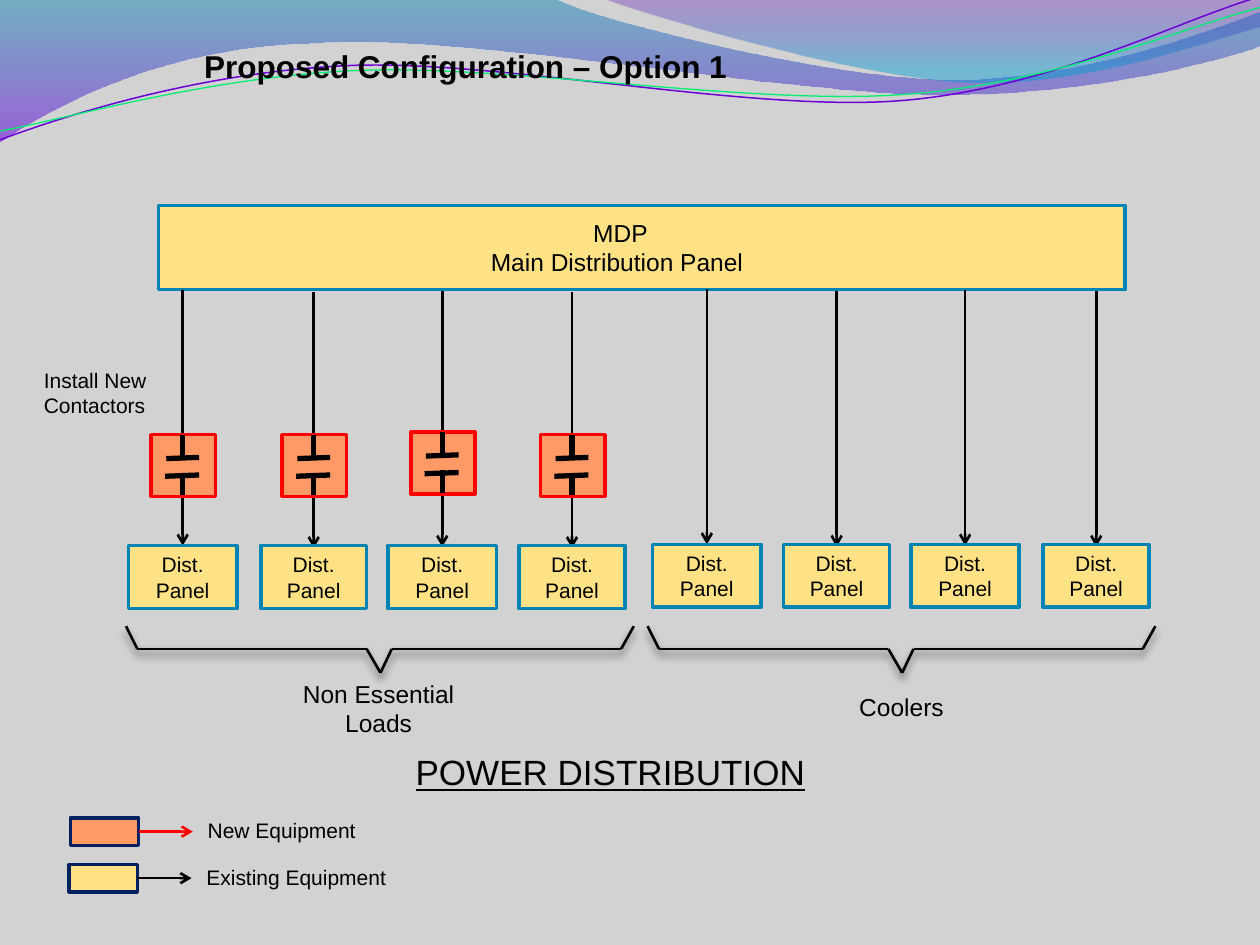
from dataclasses import dataclass
from math import cos, radians, sin

from lxml import etree
from pptx import Presentation
from pptx import util as u
from pptx.dml.color import RGBColor
from pptx.enum import shapes as kinds, text as txt
from pptx.oxml.ns import qn


@dataclass(frozen=True)
class Theme:
    font: str = "Arial"
    back: str = "D2D2D2"
    ink: str = "000000"
    old: str = "FFE285"
    new: str = "FF9966"
    teal: str = "0084B4"
    navy: str = "002060"
    red: str = "FF0000"
    small: int = 12
    label: int = 14
    title: int = 18
    head: int = 20


@dataclass(frozen=True)
class Box:
    left: float
    top: float
    width: float
    height: float


@dataclass(frozen=True)
class Wave:
    """Outline as a start point, then lines (2 numbers) and Bezier curves (6)."""
    start: tuple
    steps: tuple
    stops: tuple = ()
    color: str = ""
    width: float = 0
    mid: tuple = (0, 0)
    turn: float = 0


@dataclass(frozen=True)
class Key:
    text: str
    left: float
    top: float
    fill: str
    arrow: str


T = Theme()
LEFT, MID = txt.PP_ALIGN.LEFT, txt.PP_ALIGN.CENTER
GROW = txt.MSO_AUTO_SIZE.SHAPE_TO_FIT_TEXT

WAVES = (
    Wave((0, 0), ((4.4, -0.01), (4.76, 0.17, 6.64, 0.63, 7.58, 0.63),
                  (8.53, 0.63, 9.58, 0.26, 10, 0.09), (10.01, 0.36),
                  (9.83, 0.44, 8.7, 0.76, 7.46, 0.75),
                  (6.22, 0.75, 3.82, 0.28, 2.57, 0.34),
                  (1.29, 0.36, 0.46, 0.83, -0.01, 1.13)),
         stops=((0, "0082B2", 45), (1, "6E00DC", 55))),
    Wave((4.79, -0.01), ((5.09, 0.11, 6.82, 0.62, 7.69, 0.65),
                         (8.56, 0.69, 9.61, 0.32, 10, 0.21), (10, 0)),
         stops=((0, "5A00B3", 30), (0.8, "009BD4", 45))),
    Wave((0, 1.11), ((0.48, 0.93, 1.58, 0.57, 2.77, 0.52),
                     (3.95, 0.47, 5.93, 0.89, 7.13, 0.8),
                     (8.33, 0.71, 9.38, 0.15, 9.98, -0.02)),
         color="6B00D6", width=0.85, mid=(4.99, 0.57), turn=-2.7),
    Wave((0, 1.04), ((0.47, 0.96, 1.64, 0.61, 2.83, 0.56),
                     (4.03, 0.51, 5.97, 0.84, 7.17, 0.75),
                     (8.36, 0.67, 9.41, 0.21, 10, 0.06)),
         color="01EF72", width=0.75, mid=(5, 0.59), turn=-2.7),
)
KEYS = (Key("Existing Equipment", 0.55, 6.86, T.old, T.ink),
        Key("New Equipment", 0.56, 6.49, T.new, T.red))
LOADS = ((1.45, 2.3), (2.49, 2.32), (3.51, 2.31), (4.54, 2.32))  # centre, top
COOLERS = ((5.61, 2.29), (6.64, 2.31), (7.66, 2.3), (8.7, 2.31))
BRACE = ((0, 4.97), (0.09, 5.15), (1.91, 5.15), (2.02, 5.34),
         (2.11, 5.15), (3.93, 5.15), (4.03, 4.97))


def cm(inch: float) -> u.Length:
    """Convert the inch grid of the slide to centimetres."""
    return u.Cm(inch * 2.54)


def rgb(code: str) -> RGBColor:
    return RGBColor.from_string(code)


def write(shape, words: str, size: int, align=LEFT, bold=False, under=False) -> None:
    frame = shape.text_frame
    frame.word_wrap = True
    frame.text = words
    for para in frame.paragraphs:
        para.alignment = align
        for run in para.runs:
            font = run.font
            font.name, font.size = T.font, u.Pt(size)
            font.bold, font.underline = bold, under
            font.color.rgb = rgb(T.ink)


def label(slide, box: Box, words: str, size: int, align=LEFT, under=False) -> None:
    shape = slide.shapes.add_textbox(cm(box.left), cm(box.top), cm(box.width), cm(box.height))
    write(shape, words, size, align, under=under)
    shape.text_frame.auto_size = GROW


def block(slide, box: Box, fill: str, edge: str = ""):
    shape = slide.shapes.add_shape(kinds.MSO_SHAPE.RECTANGLE, cm(box.left), cm(box.top),
                                   cm(box.width), cm(box.height))
    shape.shadow.inherit = False
    shape.fill.solid()
    shape.fill.fore_color.rgb = rgb(fill)
    if edge:
        shape.line.color.rgb = rgb(edge)
        shape.line.width = u.Pt(2)
    else:
        shape.line.fill.background()
    return shape


def link(slide, start: tuple, end: tuple, color=T.ink, width=1.5, arrow=False, shade=False) -> None:
    line = slide.shapes.add_connector(kinds.MSO_CONNECTOR.STRAIGHT, cm(start[0]), cm(start[1]),
                                      cm(end[0]), cm(end[1]))
    line.line.color.rgb = rgb(color)
    line.line.width = u.Pt(width)
    props = line.element.spPr
    if arrow:
        etree.SubElement(props.find(qn("a:ln")), qn("a:tailEnd"), type="arrow")
    effects = etree.SubElement(props, qn("a:effectLst"))
    if shade:
        drop = etree.SubElement(effects, qn("a:outerShdw"), blurRad=str(u.Pt(4.5)),
                                dist=str(u.Pt(3)), dir="5400000", rotWithShape="0")
        tone = etree.SubElement(drop, qn("a:srgbClr"), val=T.ink)
        etree.SubElement(tone, qn("a:alpha"), val="48000")


def level(wave: Wave, x: float, y: float) -> tuple:
    """Point of the wave before its turn about mid."""
    a, dx, dy = radians(-wave.turn), x - wave.mid[0], y - wave.mid[1]
    return (cm(wave.mid[0] + dx * cos(a) - dy * sin(a)),
            cm(wave.mid[1] + dx * sin(a) + dy * cos(a)))


def outline(slide, wave: Wave):
    """Draw the points as a polygon, then join each three of a curve in a Bezier."""
    pen = slide.shapes.build_freeform(*level(wave, *wave.start))
    for step in wave.steps:
        pen.add_line_segments([level(wave, *p) for p in zip(step[::2], step[1::2])], close=False)
    if wave.stops:
        pen.add_line_segments([], close=True)
    shape = pen.convert_to_shape()
    lines = iter(list(shape.element.iter(qn("a:lnTo"))))
    for step in wave.steps:
        parts = [next(lines) for _ in step[::2]]
        if len(parts) == 3:
            curve = etree.Element(qn("a:cubicBezTo"))
            parts[0].addprevious(curve)
            for part in parts:
                curve.append(part[0])
                part.getparent().remove(part)
    shape.rotation = wave.turn
    shape.shadow.inherit = False
    return shape


def ribbon(slide, wave: Wave) -> None:
    shape = outline(slide, wave)
    if not wave.stops:
        shape.fill.background()
        shape.line.color.rgb = rgb(wave.color)
        shape.line.width = u.Pt(wave.width)
        return
    shape.line.fill.background()
    shape.fill.gradient()
    shape.fill.gradient_angle = 270
    for stop, (place, color, _) in zip(shape.fill.gradient_stops, wave.stops):
        stop.position = place
        stop.color.rgb = rgb(color)
    tones = list(shape.element.spPr.iter(qn("a:srgbClr")))
    for tone, (_, _, alpha) in zip(tones, wave.stops):
        etree.SubElement(tone, qn("a:alpha"), val=str(alpha * 1000))


def feed(slide, x: float, top: float, foot: float, wide: float) -> None:
    """Arrow from the main panel down to one distribution panel."""
    link(slide, (x, top), (x, top + 2.03), arrow=True)
    panel = block(slide, Box(x - wide / 2, foot, wide, 0.5), T.old, T.teal)
    write(panel, "Dist.\nPanel", T.small, MID)
    panel.text_frame.vertical_anchor = txt.MSO_ANCHOR.MIDDLE


def switch(slide, x: float, top: float) -> None:
    """Contactor: two plates with a gap, in a box centred on x."""
    block(slide, Box(x - 0.25, top, 0.51, 0.49), T.new, T.red)
    for x1, y1, x2, y2 in ((0, 0, 0, 0.19), (-0.13, 0.19, 0.13, 0.18),
                           (-0.14, 0.33, 0.13, 0.32), (0, 0.3, 0, 0.48)):
        link(slide, (x + x1, top + y1), (x + x2, top + y2), width=3)


def main() -> None:
    deck = Presentation()
    deck.slide_width, deck.slide_height = cm(10), cm(7.5)
    slide = deck.slides.add_slide(deck.slide_layouts[5])
    slide.background.fill.solid()
    slide.background.fill.fore_color.rgb = rgb(T.back)

    for wave in WAVES:
        ribbon(slide, wave)
    for key in KEYS:
        block(slide, Box(key.left, key.top, 0.54, 0.22), key.fill, T.navy)
        label(slide, Box(key.left + 0.99, key.top - 0.05, 1.7, 0.3), key.text, T.small)
        y = key.top + 0.11
        link(slide, (key.left + 0.54, y), (key.left + 0.97, y), key.arrow, arrow=True)

    block(slide, Box(1.26, 1.63, 7.67, 0.67), T.old, T.teal)
    name = block(slide, Box(3.64, 1.68, 2.57, 0.57), T.old)
    write(name, "MDP\nMain Distribution Panel ", T.label, MID)
    name.text_frame.vertical_anchor = txt.MSO_ANCHOR.TOP
    name.text_frame.auto_size = GROW

    for group, foot in ((LOADS, 4.33), (COOLERS, 4.32)):
        for i, (x, top) in enumerate(group):
            feed(slide, x, top, foot, (0.86, 0.84)[i % 2])
    for left in (1, 5.14):
        spots = [(left + x, y) for x, y in BRACE]
        for start, end in zip(spots, spots[1:]):
            link(slide, start, end, shade=True)
    for (x, _), top in zip(LOADS, (3.45, 3.45, 3.43, 3.45)):
        switch(slide, x, top)

    label(slide, Box(2.11, 5.34, 1.79, 0.57), "Non Essential Loads", T.label, MID)
    label(slide, Box(6.26, 5.44, 1.79, 0.34), "Coolers", T.label, MID)
    label(slide, Box(3.2, 5.91, 4, 0.44), "POWER DISTRIBUTION", T.head, under=True)
    label(slide, Box(0.25, 2.87, 1.46, 0.5), "Install New Contactors", T.small)

    title = slide.shapes.title
    title.left, title.top, title.width, title.height = cm(1.52), cm(0.32), cm(7.09), cm(0.4)
    write(title, "Proposed Configuration – Option 1", T.title, bold=True)
    title.text_frame.auto_size = GROW
    title.text_frame.vertical_anchor = txt.MSO_ANCHOR.TOP
    title.element.getparent().append(title.element)  # in front of the waves
    deck.save("out.pptx")


if __name__ == "__main__":
    main()
